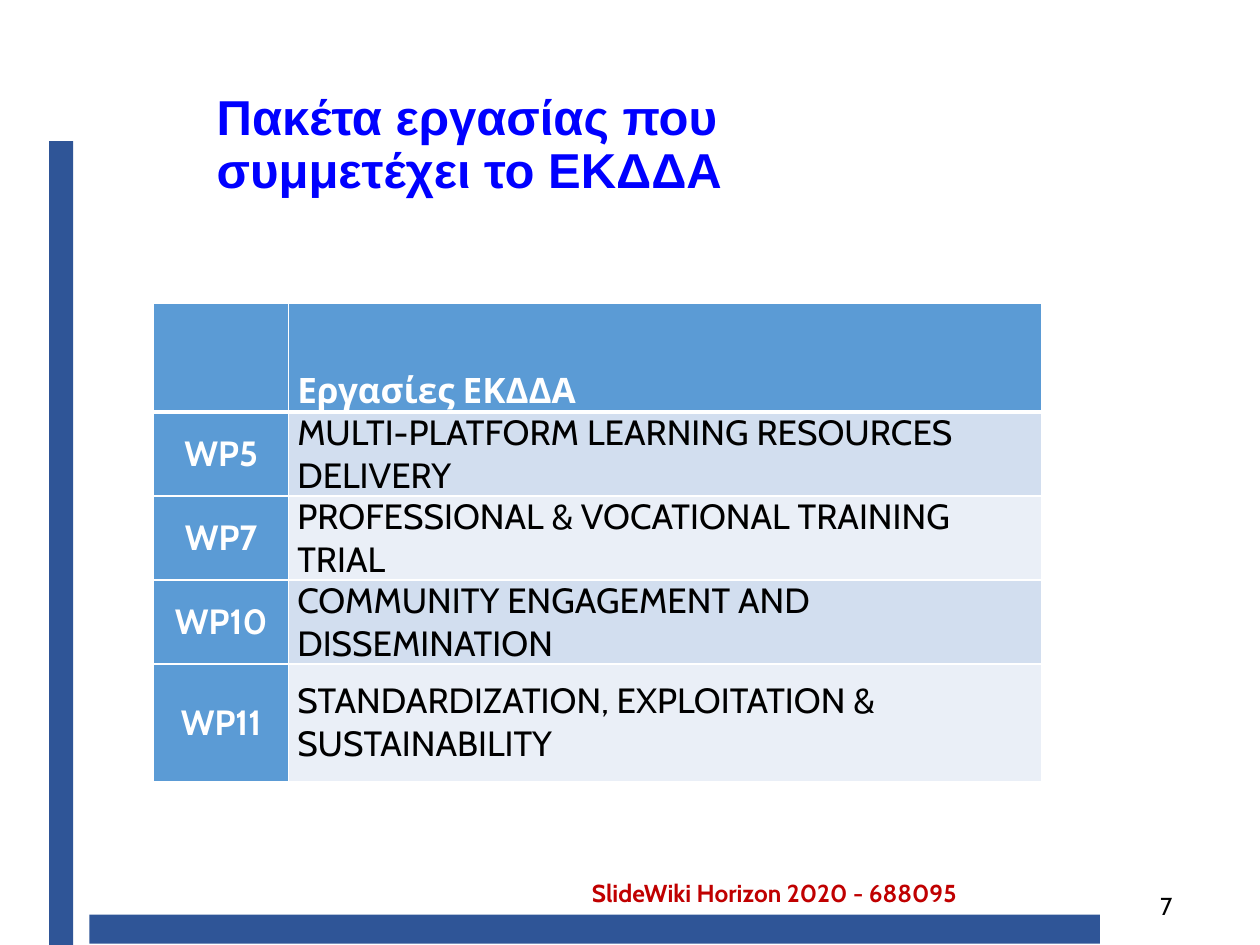
import pptx
import pptx.dml.color
import pptx.enum.shapes
import pptx.enum.text
import pptx.oxml
import pptx.oxml.ns
import pptx.util
from pptx.util import Inches

ALIGN = pptx.enum.text.PP_ALIGN
ANCHOR = pptx.enum.text.MSO_ANCHOR
BAR_BLUE = "2F5597"
HEADER_BLUE = "5B9BD5"
BAND_FILLS = ("D2DEEF", "EAEFF7")
COLUMN_WIDTHS = (1.07, 5.98)
ROW_HEIGHTS = (0.86, 0.56, 0.56, 0.56, 0.93)
WORK_PACKAGES = [
    ("", "Εργασίες ΕΚΔΔΑ"),
    ("WP5", "MULTI-PLATFORM LEARNING RESOURCES DELIVERY"),
    ("WP7", "PROFESSIONAL & VOCATIONAL TRAINING TRIAL"),
    ("WP10", "COMMUNITY ENGAGEMENT AND DISSEMINATION"),
    ("WP11", "STANDARDIZATION, EXPLOITATION &\vSUSTAINABILITY"),
]


def rgb(color):
    return pptx.dml.color.RGBColor.from_string(color)


def write(text_frame, text, size, color, bold=False, font="Cabin"):
    """Fill a text frame with one formatted paragraph and return it."""
    text_frame.text = text
    paragraph = text_frame.paragraphs[0]
    for run in paragraph.runs:
        run.font.name = font
        run.font.size = pptx.util.Pt(size)
        run.font.bold = bold
        run.font.color.rgb = rgb(color)
    return paragraph


def add_bar(slide, left, top, width, height):
    bar = slide.shapes.add_shape(
        pptx.enum.shapes.MSO_SHAPE.RECTANGLE,
        Inches(left), Inches(top), Inches(width), Inches(height))
    bar.shadow.inherit = False
    bar.fill.solid()
    bar.fill.fore_color.rgb = rgb(BAR_BLUE)
    bar.line.fill.background()


def add_label(slide, left, top, width, height, text, color, bold=False):
    label = slide.shapes.add_textbox(
        Inches(left), Inches(top), Inches(width), Inches(height))
    label.text_frame.word_wrap = True
    write(label.text_frame, text, 14, color, bold)
    return label


def place_title(slide, left, top, width, height):
    title = slide.shapes.title
    title.left, title.top = Inches(left), Inches(top)
    title.width, title.height = Inches(width), Inches(height)
    title.text_frame.vertical_anchor = ANCHOR.MIDDLE
    paragraph = write(title.text_frame, "Πακέτα εργασίας που συμμετέχει το ΕΚΔΔΑ",
                      28, "0000FF", True, "Arial")
    paragraph.alignment = ALIGN.LEFT
    paragraph.line_spacing = 0.89


def set_borders(cell, top, bottom):
    """Draw white cell borders, with top and bottom widths in points."""
    properties = cell._tc.get_or_add_tcPr()
    for side, width in (("L", 1), ("R", 1), ("T", top), ("B", bottom)):
        properties.append(pptx.oxml.parse_xml(
            f'<a:ln{side} {pptx.oxml.ns.nsdecls("a")} w="{pptx.util.Pt(width)}">'
            f'<a:solidFill><a:srgbClr val="FFFFFF"/></a:solidFill></a:ln{side}>'))


def add_work_packages(slide, left, top):
    table = slide.shapes.add_table(
        len(ROW_HEIGHTS), len(COLUMN_WIDTHS), Inches(left), Inches(top),
        Inches(sum(COLUMN_WIDTHS)), Inches(sum(ROW_HEIGHTS))).table
    for column, width in zip(table.columns, COLUMN_WIDTHS):
        column.width = Inches(width)
    for row, height in zip(table.rows, ROW_HEIGHTS):
        row.height = Inches(height)
    for row_index, texts in enumerate(WORK_PACKAGES):
        for column_index, text in enumerate(texts):
            cell = table.cell(row_index, column_index)
            is_header = row_index == 0 or column_index == 0
            cell.margin_left = cell.margin_right = Inches(0.07)
            cell.margin_top = cell.margin_bottom = 0
            cell.vertical_anchor = ANCHOR.MIDDLE if row_index else ANCHOR.BOTTOM
            set_borders(cell, top=3 if row_index == 1 else 1,
                        bottom=1 if row_index else 3)
            cell.fill.solid()
            cell.fill.fore_color.rgb = rgb(
                HEADER_BLUE if is_header else BAND_FILLS[(row_index - 1) % 2])
            paragraph = write(cell.text_frame, text, 20,
                              "FFFFFF" if is_header else "000000", is_header)
            paragraph.alignment = ALIGN.LEFT if column_index else ALIGN.CENTER


def main():
    presentation = pptx.Presentation()
    presentation.slide_width = Inches(10)
    presentation.slide_height = Inches(7.5)
    slide = presentation.slides.add_slide(presentation.slide_layouts[5])
    add_bar(slide, 0.39, 1.12, 0.19, 6.38)
    add_bar(slide, 0.71, 7.26, 8.02, 0.23)
    add_label(slide, 4.6, 6.92, 3.64, 0.34,
              "SlideWiki Horizon 2020 - 688095", "C00000", True)
    add_work_packages(slide, 1.22, 2.41)
    place_title(slide, 1.62, 0.69, 5.38, 0.94)
    add_label(slide, 9.11, 7.02, 0.56, 0.4, "7", "000000")
    presentation.save("out.pptx")


if __name__ == "__main__":
    main()
